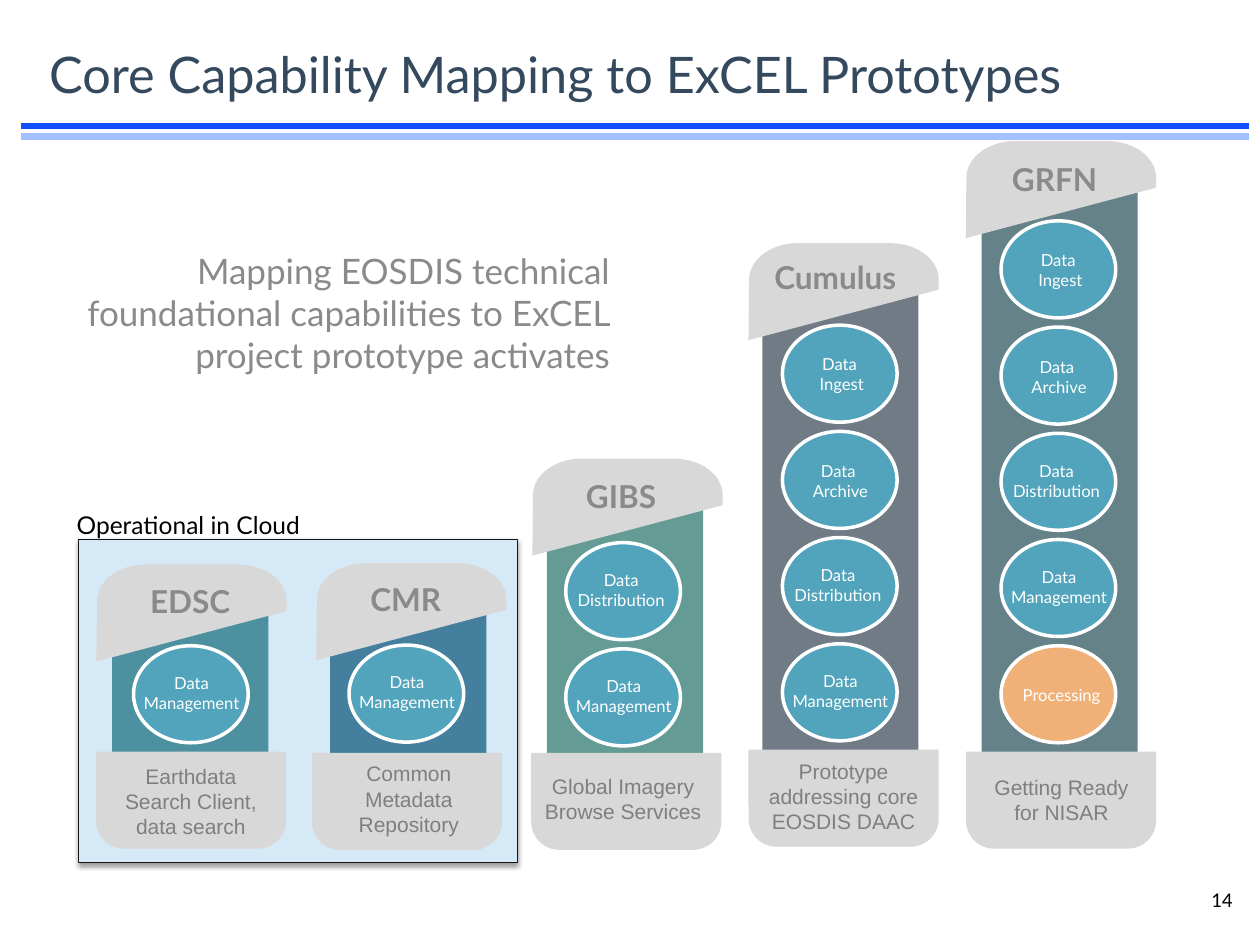
"""Build the slide that maps core capabilities to prototype pillars."""
from dataclasses import dataclass

from lxml.etree import SubElement
from pptx import Presentation
from pptx.dml.color import RGBColor
from pptx.enum.shapes import MSO_CONNECTOR, MSO_SHAPE
from pptx.enum.text import MSO_ANCHOR, PP_ALIGN
from pptx.oxml.ns import qn
from pptx.util import Inches, Pt

COLUMNS, ROWS = 100, 75
WIDTH, HEIGHT = Inches(10), Inches(7.5)
SHAFT_WIDTH, CAP_WIDTH, CAP_HEIGHT = 12.4, 15.1, 7.7
DISC_WIDTH, DISC_HEIGHT, DISC_STEP = 9.1, 7.7, 8.43

INGEST, ARCHIVE = "Data \nIngest", "Data \nArchive"
DISTRIBUTION, MANAGEMENT = "Data Distribution", "Data Management"
PROCESSING = "Processing"
LABEL_OFFSETS = {
    INGEST: (-0.4, 1.8),
    ARCHIVE: (-0.5, 1.85),
    DISTRIBUTION: (-0.7, 1.7),
    MANAGEMENT: (-0.5, 1.65),
    PROCESSING: (-0.3, 2.6),
}


@dataclass
class Pillar:
    """Describe one prototype; each place is a column and a row."""

    name: str
    caption: str
    fill: str
    capabilities: list
    cap: tuple
    shaft: tuple
    base: tuple
    name_at: tuple
    caption_at: tuple
    lowest_disc: tuple


PILLARS = [
    Pillar("EDSC", "Earthdata Search Client, data search", "4D91A1", [MANAGEMENT],
           (7.65, 44.8), (8.9, 46.1), (7.6, 59.65), (8.8, 45.7), (7.7, 60.1),
           (10.6, 51.25)),
    Pillar("CMR", "Common Metadata Repository", "44809E", [MANAGEMENT],
           (25.1, 44.7), (26.2, 46), (24.75, 59.75), (25.9, 45.5), (25, 59.9),
           (27.7, 51.2)),
    Pillar("GIBS", "Global Imagery Browse Services", "649C95",
           [DISTRIBUTION, MANAGEMENT],
           (42.25, 36.4), (43.4, 38.8), (42.15, 59.75), (43, 37.4), (42, 60.9),
           (44.9, 51.5)),
    Pillar("Cumulus", "Prototype addressing core EOSDIS DAAC", "717B85",
           [INGEST, ARCHIVE, DISTRIBUTION, MANAGEMENT],
           (59.4, 19.3), (60.5, 21.2), (59.4, 59.5), (60, 20), (59.5, 59.7),
           (62.1, 51.1)),
    Pillar("GRFN", "Getting Ready for NISAR", "658289",
           [INGEST, ARCHIVE, DISTRIBUTION, MANAGEMENT, PROCESSING],
           (76.65, 11.2), (77.9, 13.2), (76.65, 59.65), (77.4, 12.2), (76.8, 61),
           (79.45, 51.25)),
]


def colour(value):
    """Turn a hex string into a colour."""
    return RGBColor.from_string(value)


def write(frame, text, size=12, ink="000000", font="Lato", bold=False,
          align=PP_ALIGN.LEFT, anchor=MSO_ANCHOR.TOP, spacing=None):
    """Fill a text frame with one paragraph per line of text."""
    frame.word_wrap = True
    frame.vertical_anchor = anchor
    for index, line in enumerate(text.split("\n")):
        paragraph = frame.add_paragraph() if index else frame.paragraphs[0]
        paragraph.alignment = align
        paragraph.line_spacing = spacing
        run = paragraph.add_run()
        run.text = line
        run.font.name, run.font.size, run.font.bold = font, Pt(size), bold
        run.font.color.rgb = colour(ink)


def bend(outline, corner):
    """Turn three straight segments, starting at a corner, into one curve."""
    segments = outline[corner:corner + 3]
    curve = SubElement(outline[0].getparent(), qn("a:cubicBezTo"))
    segments[0].addprevious(curve)
    for segment in segments:
        curve.append(segment[0])
        segment.getparent().remove(segment)


class Board:
    """Hold the style and the slide, placing elements on a grid."""

    stone, name_ink, caption_ink = "D8D8D8", "8A8A8A", "7F7F7F"
    disc, processing_disc, white = "51A4BB", "F0B179", "FFFFFF"

    def __init__(self, slide):
        """Keep the slide to draw on."""
        self.slide = slide

    def place(self, *cells):
        """Convert alternating columns and rows to lengths."""
        units = (WIDTH / COLUMNS, HEIGHT / ROWS)
        return [round(cell * units[index % 2]) for index, cell in enumerate(cells)]

    def paint(self, shape, fill, line=None, weight=1):
        """Give a shape a flat fill and an optional outline."""
        shape.shadow.inherit = False
        shape.fill.solid()
        shape.fill.fore_color.rgb = colour(fill)
        if line:
            shape.line.color.rgb = colour(line)
            shape.line.width = Pt(weight)
        else:
            shape.line.fill.background()
        return shape

    def title(self, text, *cells):
        """Move and fill the title placeholder."""
        heading = self.slide.shapes.title
        heading.left, heading.top, heading.width, heading.height = self.place(*cells)
        write(heading.text_frame, text, size=28.8, ink="34495E",
              anchor=MSO_ANCHOR.MIDDLE, spacing=0.85)

    def text(self, text, *cells, **style):
        """Add a text box."""
        box = self.slide.shapes.add_textbox(*self.place(*cells))
        write(box.text_frame, text, **style)

    def shape(self, kind, cells, fill, **outline):
        """Add a painted preset shape."""
        preset = self.slide.shapes.add_shape(kind, *self.place(*cells))
        return self.paint(preset, fill, **outline)

    def rule(self, row, ink):
        """Add a horizontal rule under the title."""
        stroke = self.slide.shapes.add_connector(
            MSO_CONNECTOR.STRAIGHT, *self.place(1.7, row, 99.15, row))
        stroke.line.color.rgb = colour(ink)
        stroke.line.width = Pt(4)
        SubElement(stroke.element.spPr, qn("a:effectLst"))

    def panel(self, *cells):
        """Add the outlined panel with a soft shadow below it."""
        panel = self.shape(MSO_SHAPE.RECTANGLE, cells, "D6E9F7",
                           line="161616", weight=0.75)
        effects = panel.element.spPr.find(qn("a:effectLst"))
        shadow = SubElement(effects, qn("a:outerShdw"), blurRad=str(Pt(3.1)),
                            dist=str(Pt(1.6)), dir="5400000", rotWithShape="0")
        black = SubElement(shadow, qn("a:srgbClr"), val="000000")
        SubElement(black, qn("a:alpha"), val="38000")

    def cap(self, left, top):
        """Add a round-shouldered cap with a slanted lower edge."""
        corners = [(3.9, 0), (11.2, 0), (13.4, 0), (CAP_WIDTH, 1.3), (CAP_WIDTH, 2.9),
                   (CAP_WIDTH, 3.7), (0, CAP_HEIGHT), (0.05, 2.9),
                   (0.05, 1.3), (1.8, 0), (3.9, 0)]
        points = [self.place(left + x, top + y) for x, y in corners]
        builder = self.slide.shapes.build_freeform(*points[0])
        builder.add_line_segments(points[1:], close=True)
        cap = self.paint(builder.convert_to_shape(), self.stone)
        outline = next(cap.element.iter(qn("a:path")))
        for corner in (8, 2):
            bend(outline, corner)

    def capability(self, text, left, top):
        """Add a labelled disc."""
        fill = self.processing_disc if text == PROCESSING else self.disc
        self.shape(MSO_SHAPE.OVAL, (left, top, DISC_WIDTH, DISC_HEIGHT), fill,
                   line=self.white, weight=2)
        across, down = LABEL_OFFSETS[text]
        self.text(text, left + across, top + down, 10.2, 4, size=9.5,
                  ink=self.white, align=PP_ALIGN.CENTER)

    def pillar(self, pillar):
        """Add a shaft with its cap, base, labels and discs."""
        shaft_height = pillar.base[1] + 0.3 - pillar.shaft[1]
        self.shape(MSO_SHAPE.RECTANGLE, (*pillar.shaft, SHAFT_WIDTH, shaft_height),
                   pillar.fill)
        self.cap(*pillar.cap)
        base = self.shape(MSO_SHAPE.ROUND_2_SAME_RECTANGLE,
                          (*pillar.base, CAP_WIDTH, CAP_HEIGHT), self.stone)
        base.rotation = 180
        base.adjustments[0] = 0.29
        self.text(pillar.name, *pillar.name_at, 12.6, 3.9, size=18, bold=True,
                  ink=self.name_ink, align=PP_ALIGN.CENTER)
        self.text(pillar.caption, *pillar.caption_at, 14.9, 4.8, font="Arial",
                  ink=self.caption_ink, align=PP_ALIGN.CENTER)
        left, lowest = pillar.lowest_disc
        for level, capability in enumerate(reversed(pillar.capabilities)):
            self.capability(capability, left, lowest - level * DISC_STEP)


def main():
    """Build and save the slide."""
    deck = Presentation()
    deck.slide_width, deck.slide_height = WIDTH, HEIGHT
    board = Board(deck.slides.add_slide(deck.slide_layouts[5]))
    board.rule(10, "114FFB")
    board.rule(10.85, "A2C1FE")
    board.panel(6.25, 42.8, 34.8, 25.65)
    board.title("Core Capability Mapping to ExCEL Prototypes", 2.9, 1.55, 97.1, 9.3)
    board.text("14", 75.5, 69.4, 23.3, 4, font="Calibri",
               align=PP_ALIGN.RIGHT, anchor=MSO_ANCHOR.MIDDLE)
    for pillar in PILLARS:
        board.pillar(pillar)
    board.text("Operational in Cloud", 5.1, 40, 20.3, 3.4, size=14)
    board.text("Mapping EOSDIS technical foundational capabilities to ExCEL "
               "project prototype activates", 3, 19.3, 46.4, 11.1, size=20,
               ink=board.name_ink, align=PP_ALIGN.RIGHT)
    deck.save("out.pptx")


if __name__ == "__main__":
    main()
